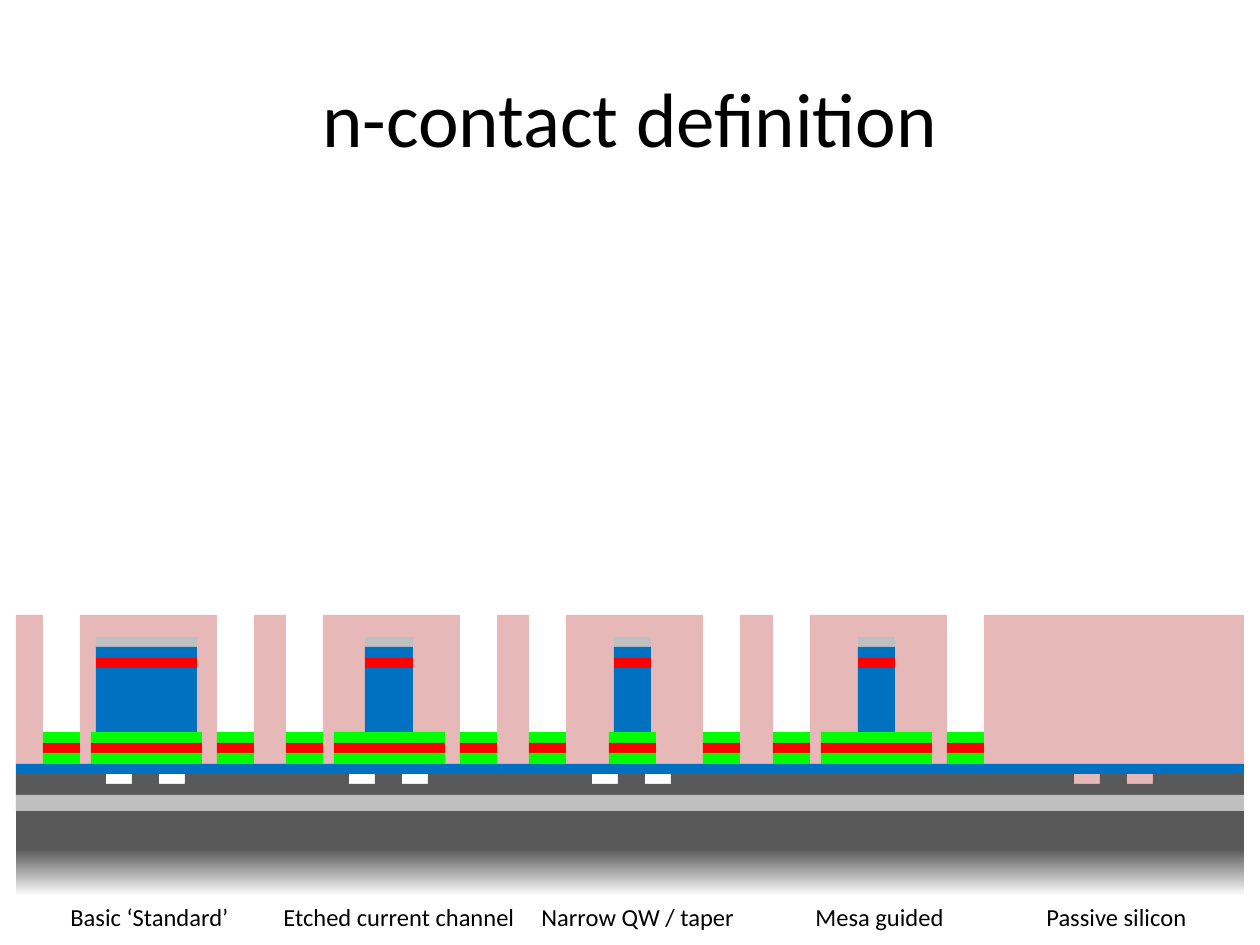
from itertools import pairwise

from pptx import Presentation
from pptx import util as u
from pptx.dml import color
from pptx.enum import shapes, text

PX = 914400 // 126  # EMU per px
LEFT, RIGHT = 16, 1244  # edges of the wafer

RESIST, BLUE, RED, GREEN = "E6B9B8", "0070C0", "FF0000", "00FF00"
SILICON, LIGHT_GREY, BLACK, WHITE = "595959", "BFBFBF", "000000", "FFFFFF"

DEVICE_LEFTS = [43 + i * 730 // 3 for i in range(4)]
DEVICE_WIDTH, CONTACT_WIDTH = 211, 37
CENTRE = 103  # from the left of a device to the middle of its mesa
MESAS = [(111, 101), (111, 48), (47, 37), (111, 37)]  # base and pillar widths

RESIST_TOP, FILM_TOP = 615, 764
BASE_EDGES, BASE_COLOURS = (732, 743, 753, 764), (GREEN, RED, GREEN)
PILLAR_EDGES = (637, 647, 658, 668, 732)
PILLAR_COLOURS = (LIGHT_GREY, BLUE, RED, BLUE)

TRENCHES, TRENCH_WIDTH = (63, 116), 26  # offsets from the left of a device
PASSIVE_LEFT = 1011

LABELS = [
    ("Basic ‘Standard’", 58, 188),
    ("Etched current channel", 271, 258),
    ("Narrow QW / taper", 529, 219),
    ("Mesa guided", 803, 155),
    ("Passive silicon", 1034, 166),
]


def px(length):
    return u.Emu(length * PX)


def rgb(value):
    return color.RGBColor.from_string(value)


def add_block(page, left, top, right, bottom, fill):
    """Add a rectangle without outline, given by its four edges."""
    block = page.shapes.add_shape(
        shapes.MSO_SHAPE.RECTANGLE,
        px(left), px(top), px(right - left), px(bottom - top))
    block.shadow.inherit = False
    block.line.fill.background()
    block.fill.solid()
    block.fill.fore_color.rgb = rgb(fill)
    return block


def add_stack(page, left, width, edges, colours):
    """Add layers on top of each other between consecutive edges."""
    for (top, bottom), fill in zip(pairwise(edges), colours):
        add_block(page, left, top, left + width, bottom, fill)


def add_text(page, words, left, top, width, height, *, size, wrap=False,
             align=text.PP_ALIGN.LEFT, anchor=text.MSO_ANCHOR.TOP):
    box = page.shapes.add_textbox(px(left), px(top), px(width), px(height))
    frame = box.text_frame
    frame.word_wrap = wrap
    frame.vertical_anchor = anchor
    para = frame.paragraphs[0]
    para.alignment = align
    span = para.add_run()
    span.text = words
    span.font.name = "Calibri"
    span.font.size = u.Pt(size)
    span.font.color.rgb = rgb(BLACK)


def add_resist(page):
    """Cover the wafer with resist, open above every n-contact."""
    start = LEFT
    for left in DEVICE_LEFTS:
        inner_left = left + CONTACT_WIDTH
        inner_right = left + DEVICE_WIDTH - CONTACT_WIDTH
        add_block(page, start, RESIST_TOP, left, FILM_TOP, RESIST)
        add_block(page, inner_left, RESIST_TOP, inner_right, FILM_TOP, RESIST)
        start = left + DEVICE_WIDTH
    add_block(page, start, RESIST_TOP, RIGHT, 784, RESIST)


def add_wafer(page):
    substrate = add_block(page, LEFT, 811, RIGHT, 896, SILICON)
    substrate.fill.gradient()
    substrate.fill.gradient_angle = 270
    stops = ((0.45, SILICON), (1, WHITE))
    for stop, (position, value) in zip(substrate.fill.gradient_stops, stops):
        stop.position = position
        stop.color.rgb = rgb(value)

    add_block(page, LEFT, FILM_TOP, RIGHT, 774, BLUE)
    add_stack(page, LEFT, RIGHT - LEFT, (784, 795, 811), (SILICON, LIGHT_GREY))

    start = LEFT
    for left in DEVICE_LEFTS[:3] + [PASSIVE_LEFT]:
        for offset in TRENCHES:
            add_block(page, start, 774, left + offset, 784, SILICON)
            start = left + offset + TRENCH_WIDTH
    add_block(page, start, 774, RIGHT, 784, SILICON)


def add_device(page, left, base_width, pillar_width):
    """Add a mesa with its pillar and a contact on either side."""
    centre = left + CENTRE
    for x, width in (
        (left, CONTACT_WIDTH),
        (centre - base_width // 2, base_width),
        (left + DEVICE_WIDTH - CONTACT_WIDTH, CONTACT_WIDTH),
    ):
        add_stack(page, x, width, BASE_EDGES, BASE_COLOURS)
    add_stack(page, centre - pillar_width // 2, pillar_width,
              PILLAR_EDGES, PILLAR_COLOURS)


def main():
    deck = Presentation()
    deck.slide_width, deck.slide_height = px(1260), px(945)
    page = deck.slides.add_slide(deck.slide_layouts[6])

    add_resist(page)
    add_text(page, "n-contact definition", 63, 38, 1134, 157, size=44,
             wrap=True, align=text.PP_ALIGN.CENTER,
             anchor=text.MSO_ANCHOR.MIDDLE)
    add_wafer(page)
    for left, widths in zip(DEVICE_LEFTS, MESAS):
        add_device(page, left, *widths)
    for words, left, width in LABELS:
        add_text(page, words, left, 896, width, 43, size=14)

    deck.save("out.pptx")


if __name__ == "__main__":
    main()
